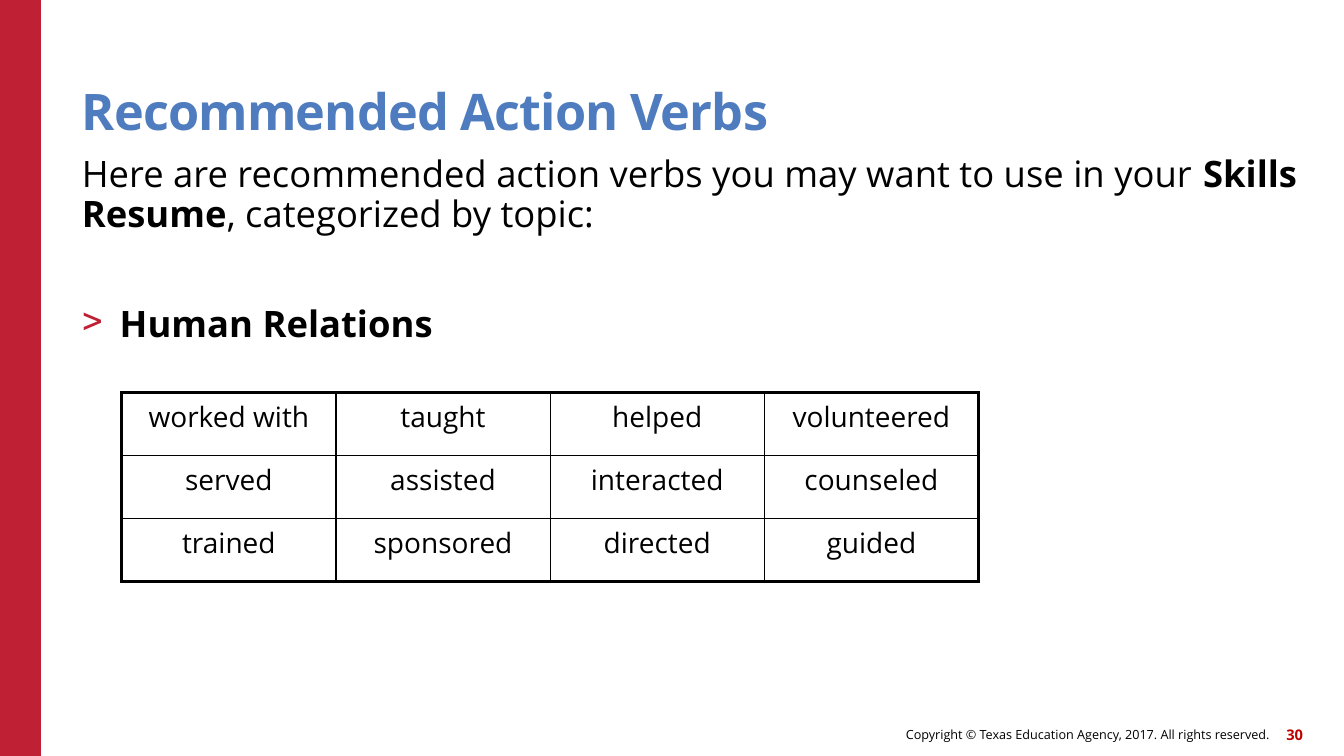
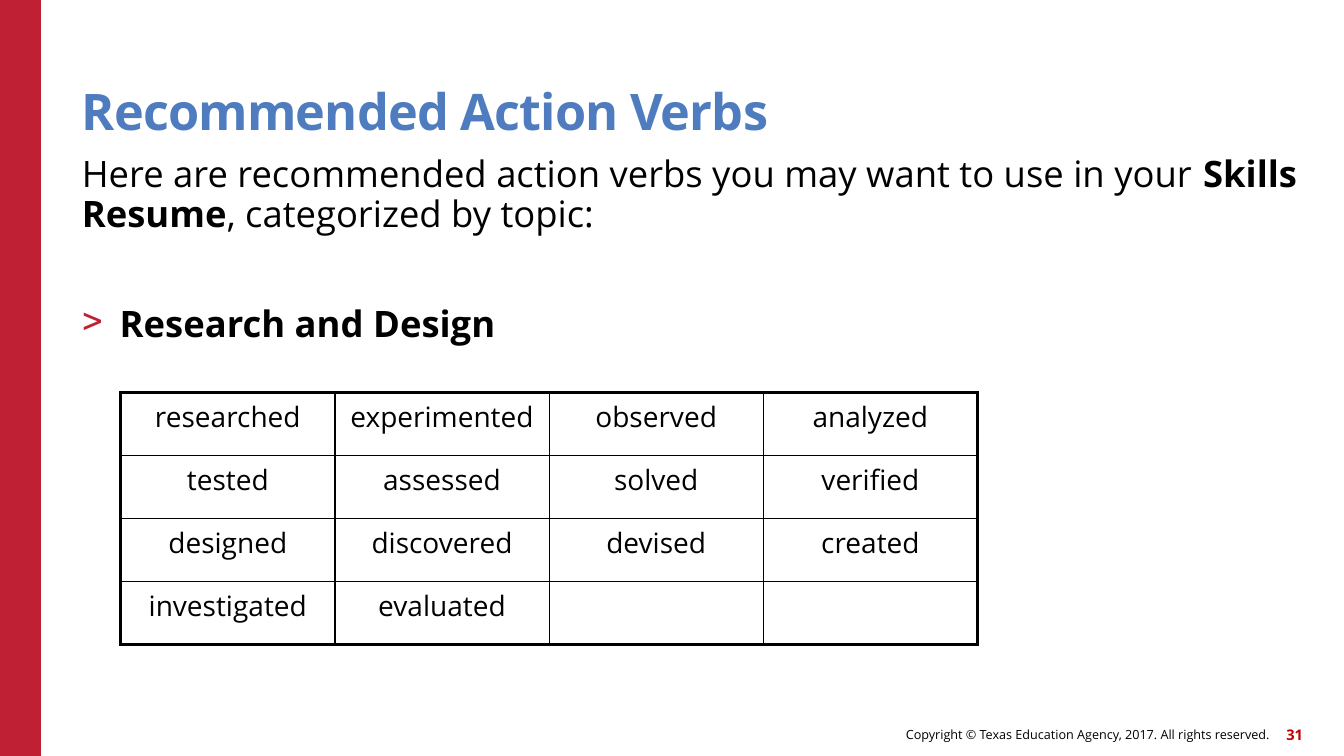
from lxml.etree import SubElement
from pptx import Presentation
from pptx.dml.color import RGBColor
from pptx.enum.shapes import MSO_SHAPE
from pptx.enum.text import MSO_ANCHOR as ANCHOR, PP_ALIGN as ALIGN
from pptx.oxml.ns import qn
from pptx.util import Pt

PX = 9525
SLIDE_WIDTH, SLIDE_HEIGHT = 1280, 720
MARGIN = 78
FONT = "Open Sans"
BLACK = RGBColor(0x00, 0x00, 0x00)
BAND_RED = RGBColor(0xC0, 0x20, 0x33)
NUMBER_RED = RGBColor(0xC0, 0x00, 0x00)
TITLE_BLUE = RGBColor(0x4E, 0x7C, 0xBE)
THIN, THICK = 1, 2.25

TITLE = "Recommended Action Verbs"
INTRO = [
    ("Here are recommended action verbs you may want to use in your ", False),
    ("Skills Resume", True),
    (", categorized by topic:", False),
]
COPYRIGHT = "Copyright © Texas Education Agency, 2017. All rights reserved."
# Slide number, topic, left edge of the table, verbs by row
TOPICS = [
    (30, "Human Relations", 116, [
        ["worked with", "taught", "helped", "volunteered"],
        ["served", "assisted", "interacted", "counseled"],
        ["trained", "sponsored", "directed", "guided"],
    ]),
    (31, "Research and Design", 115, [
        ["researched", "experimented", "observed", "analyzed"],
        ["tested", "assessed", "solved", "verified"],
        ["designed", "discovered", "devised", "created"],
        ["investigated", "evaluated", "", ""],
    ]),
]


def to_emu(*lengths):
    return [length * PX for length in lengths]


def style_font(font, size, color=BLACK, bold=False):
    font.name = FONT
    font.size = Pt(size)
    font.color.rgb = color
    font.bold = bold


def add_text_frame(slide, box, anchor=ANCHOR.TOP):
    """Add a wrapping text box without insets and return its text frame."""
    frame = slide.shapes.add_textbox(*to_emu(*box)).text_frame
    frame.word_wrap = True
    frame.vertical_anchor = anchor
    frame.margin_left = frame.margin_top = 0
    frame.margin_right = frame.margin_bottom = 0
    return frame


def add_line(slide, box, text, size, color, bold, anchor, align):
    """Add a text box holding one paragraph and return the paragraph."""
    frame = add_text_frame(slide, box, anchor)
    frame.text = text
    paragraph = frame.paragraphs[0]
    paragraph.alignment = align
    style_font(paragraph.runs[0].font, size, color, bold)
    return paragraph


def add_band(slide, box):
    band = slide.shapes.add_shape(MSO_SHAPE.RECTANGLE, *to_emu(*box))
    band.shadow.inherit = False
    band.fill.solid()
    band.fill.fore_color.rgb = BAND_RED
    band.line.fill.background()


def add_footer(slide, box, number):
    left, top, width, height = box
    number_width, overlap = 40, 8
    number_left = left + width - number_width
    copyright_box = (left, top, number_left + overlap - left, height)
    number_box = (number_left, top, number_width, height)
    add_line(slide, copyright_box, COPYRIGHT, 9, BLACK, False,
             ANCHOR.MIDDLE, ALIGN.RIGHT)
    add_line(slide, number_box, str(number), 10.5, NUMBER_RED, True,
             ANCHOR.MIDDLE, ALIGN.RIGHT)


def add_title(slide, box):
    paragraph = add_line(slide, box, TITLE, 36, TITLE_BLUE, True,
                         ANCHOR.BOTTOM, ALIGN.LEFT)
    paragraph.line_spacing = 0.9
    paragraph.runs[0].font._element.set("spc", "-60")


def add_bullet(paragraph, character, color, indent):
    properties = paragraph._p.get_or_add_pPr()
    properties.set("marL", str(indent * PX))
    properties.set("indent", str(-indent * PX))
    bullet_color = SubElement(properties, qn("a:buClr"))
    SubElement(bullet_color, qn("a:srgbClr")).set("val", str(color))
    SubElement(properties, qn("a:buChar")).set("char", character)


def add_body(slide, box, topic):
    frame = add_text_frame(slide, box)
    intro = frame.paragraphs[0]
    heading = frame.add_paragraph()
    add_bullet(heading, ">", BAND_RED, 36)
    heading.space_before = Pt(51)
    for paragraph, parts in ((intro, INTRO), (heading, [(topic, True)])):
        paragraph.line_spacing = 0.9
        for text, bold in parts:
            run = paragraph.add_run()
            run.text = text
            style_font(run.font, 26, bold=bold)


def set_borders(cell, widths):
    """Draw the cell's borders, given as widths by side: L, R, T, B."""
    properties = cell._tc.get_or_add_tcPr()
    for side, width in widths.items():
        line = SubElement(properties, qn(f"a:ln{side}"))
        line.set("w", str(Pt(width)))
        fill = SubElement(line, qn("a:solidFill"))
        SubElement(fill, qn("a:srgbClr")).set("val", str(BLACK))


def add_verb_table(slide, left, top, verbs):
    column_width, row_height = 204, 60
    row_count, column_count = len(verbs), len(verbs[0])
    table = slide.shapes.add_table(
        row_count, column_count,
        *to_emu(left, top, column_width * column_count, row_height * row_count),
    ).table
    table.first_row = table.horz_banding = False
    for row, words in enumerate(verbs):
        for column, word in enumerate(words):
            cell = table.cell(row, column)
            set_borders(cell, {
                "L": THICK if column == 0 else THIN,
                "R": THICK if column == column_count - 1 else THIN,
                "T": THICK if row == 0 else THIN,
                "B": THICK if row == row_count - 1 else THIN,
            })
            cell.fill.background()
            if word:
                cell.text = word
                paragraph = cell.text_frame.paragraphs[0]
                paragraph.alignment = ALIGN.CENTER
                style_font(paragraph.runs[0].font, 20)


def add_topic_slide(presentation, number, topic, table_left, verbs):
    slide = presentation.slides.add_slide(presentation.slide_layouts[6])
    add_band(slide, (0, 0, 39, SLIDE_HEIGHT))
    add_footer(slide, (589, 684, 652, 31), number)
    add_title(slide, (MARGIN, 43, 1056, 92))
    add_body(slide, (MARGIN, 149, 1161, 211), topic)
    add_verb_table(slide, table_left, 374, verbs)


def main():
    presentation = Presentation()
    presentation.slide_width, presentation.slide_height = to_emu(
        SLIDE_WIDTH, SLIDE_HEIGHT)
    for topic in TOPICS:
        add_topic_slide(presentation, *topic)
    presentation.save("out.pptx")


if __name__ == "__main__":
    main()
